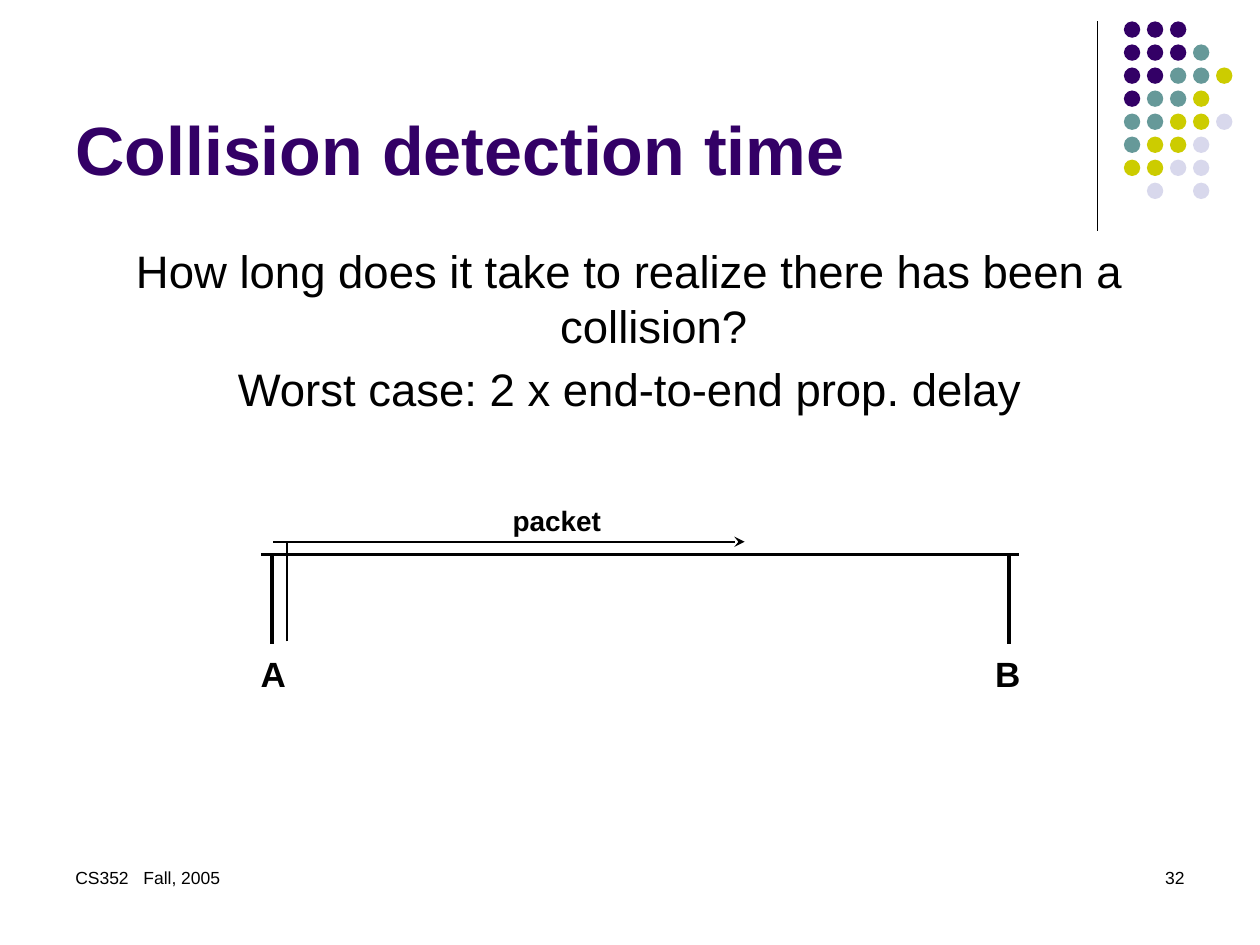
import pptx
import pptx.util
import pptx.dml.color
import pptx.enum.shapes
import pptx.enum.text
from lxml import etree

Inch = pptx.util.Inches
Pt = pptx.util.Pt
Align = pptx.enum.text.PP_ALIGN
Anchor = pptx.enum.text.MSO_ANCHOR
A = "{http://schemas.openxmlformats.org/drawingml/2006/main}"


def hue(code):
    """Turn a hex string into a colour."""
    return pptx.dml.color.RGBColor.from_string(code)


def write(box, lines, size, color="000000", bold=False, align=Align.LEFT,
          anchor=Anchor.TOP, wrap=True):
    """Put a text box on the slide and return its paragraphs."""
    frame = slide.shapes.add_textbox(*map(Inch, box)).text_frame
    frame.word_wrap = wrap
    frame.vertical_anchor = anchor
    for i, line in enumerate(lines):
        para = frame.add_paragraph() if i else frame.paragraphs[0]
        para.alignment = align
        run = para.add_run()
        run.text = line
        run.font.name = "Arial"
        run.font.size = Pt(size)
        run.font.bold = bold
        run.font.color.rgb = hue(color)
    return frame.paragraphs


deck = pptx.Presentation()
deck.slide_width, deck.slide_height = Inch(10), Inch(7.5)
slide = deck.slides.add_slide(deck.slide_layouts[6])

# Corner dots, one letter per colour
tints = {"P": "330066", "T": "669999", "Y": "CCCC00", "L": "D8D8EC"}
dots = ["PPP", "PPPT", "PPTTY", "PTTY", "TTYYL", "TYYL", "YYLL", ".L.L"]
step = 1.28 / 7
for row, marks in enumerate(dots):
    for col, mark in enumerate(marks):
        if mark in tints:
            dot = slide.shapes.add_shape(
                pptx.enum.shapes.MSO_SHAPE.OVAL, Inch(8.92 + col * step),
                Inch(0.17 + row * step), Inch(0.13), Inch(0.13))
            dot.shadow.inherit = False
            dot.fill.solid()
            dot.fill.fore_color.rgb = hue(tints[mark])
            dot.line.fill.background()

# Title, body and footer share the side margin
side, wide = 0.5, 9
write((side, 0.13, 8.25, 1.42), ["Collision detection time"], 39, "330066",
      bold=True, anchor=Anchor.BOTTOM)
body = write((side, 1.88, wide, 4.82),
             ["How long does it take to realize there has been a collision?",
              "Worst case: 2 x end-to-end prop. delay"], 26, align=Align.CENTER)
for para in body:
    props = para._p.get_or_add_pPr()
    props.set("marL", str(Inch(0.38)))
    props.set("indent", str(Inch(-0.38)))
body[1].space_before = Pt(5.2)

foot = write((side, 6.83, 2.33, 0.5), ["CS352\tFall, 2005"], 10)[0]
tabs = etree.SubElement(foot._p.get_or_add_pPr(), A + "tabLst")
etree.SubElement(tabs, A + "tab", pos=str(Inch(0.54)), algn="l")
write((side + wide - 2.33, 6.83, 2.33, 0.5), ["32"], 10, align=Align.RIGHT)

# Cable with a station at each end, and the packet on its way
cable, base, sent = 4.4, 5.11, 4.3
lines = [
    (8.71, 0.17, 8.71, 1.83, 0.75, False),
    (2.07, cable, 8.09, cable, 2, False),
    (2.16, cable, 2.16, base, 2, False),
    (8.01, cable, 8.01, base, 2, False),
    (2.28, 5.09, 2.28, sent, 1, False),
    (2.17, sent, 5.91, sent, 1, True),
]
for *ends, width, arrow in lines:
    line = slide.shapes.add_connector(
        pptx.enum.shapes.MSO_CONNECTOR.STRAIGHT, *map(Inch, ends))
    line.line.color.rgb = hue("000000")
    line.line.width = Pt(width)
    if arrow:
        etree.SubElement(line.line._get_or_add_ln(), A + "tailEnd",
                         type="stealth")
    etree.SubElement(line._element.spPr, A + "effectLst")

for name, left, top, width, high, size in [
        ("A", 1.97, 5.13, 0.4, 0.43, 20), ("B", 7.8, 5.13, 0.4, 0.43, 20),
        ("packet", 3.97, 3.95, 0.9, 0.37, 16)]:
    write((left, top, width, high), [name], size, bold=True, wrap=False)

deck.save("out.pptx")
